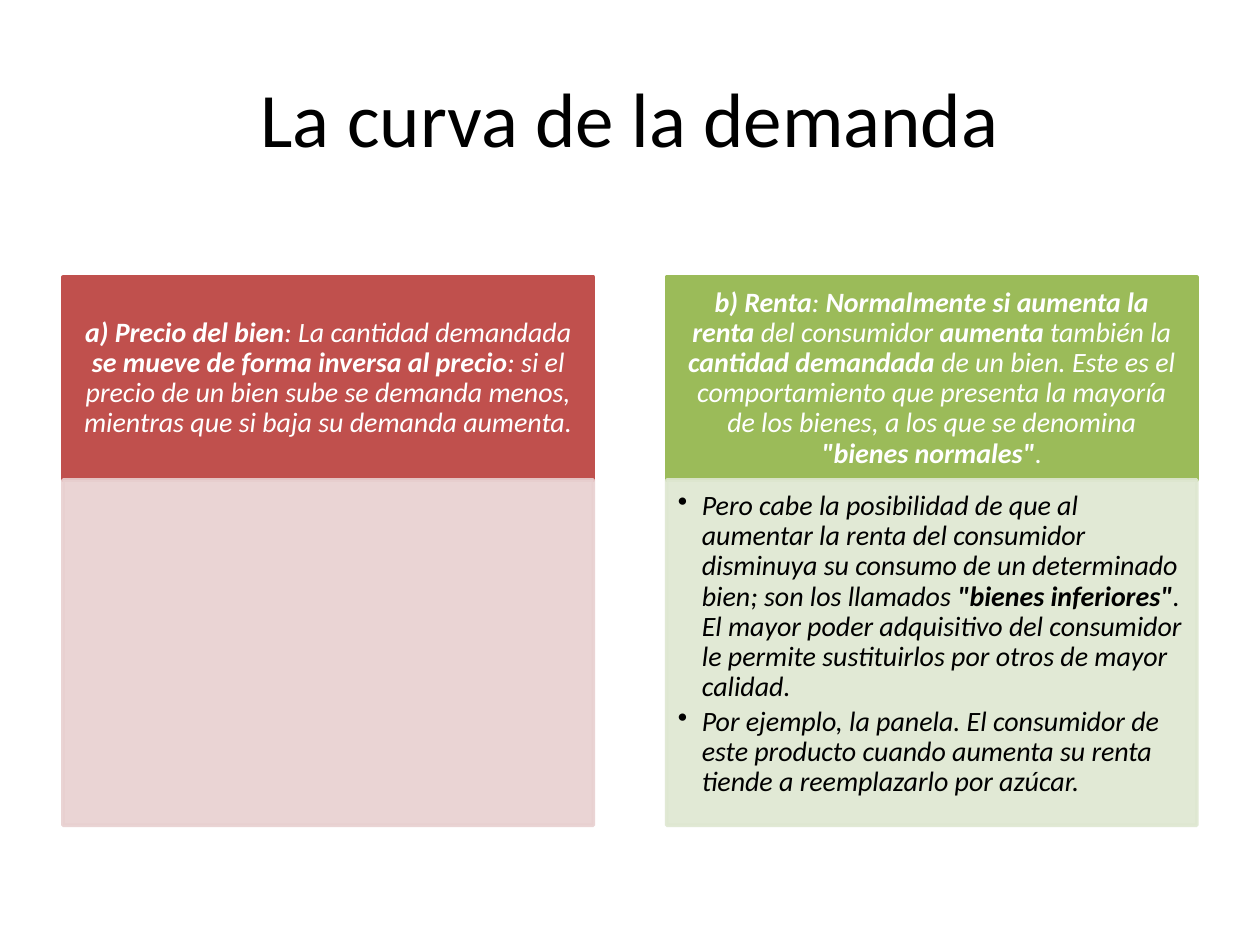
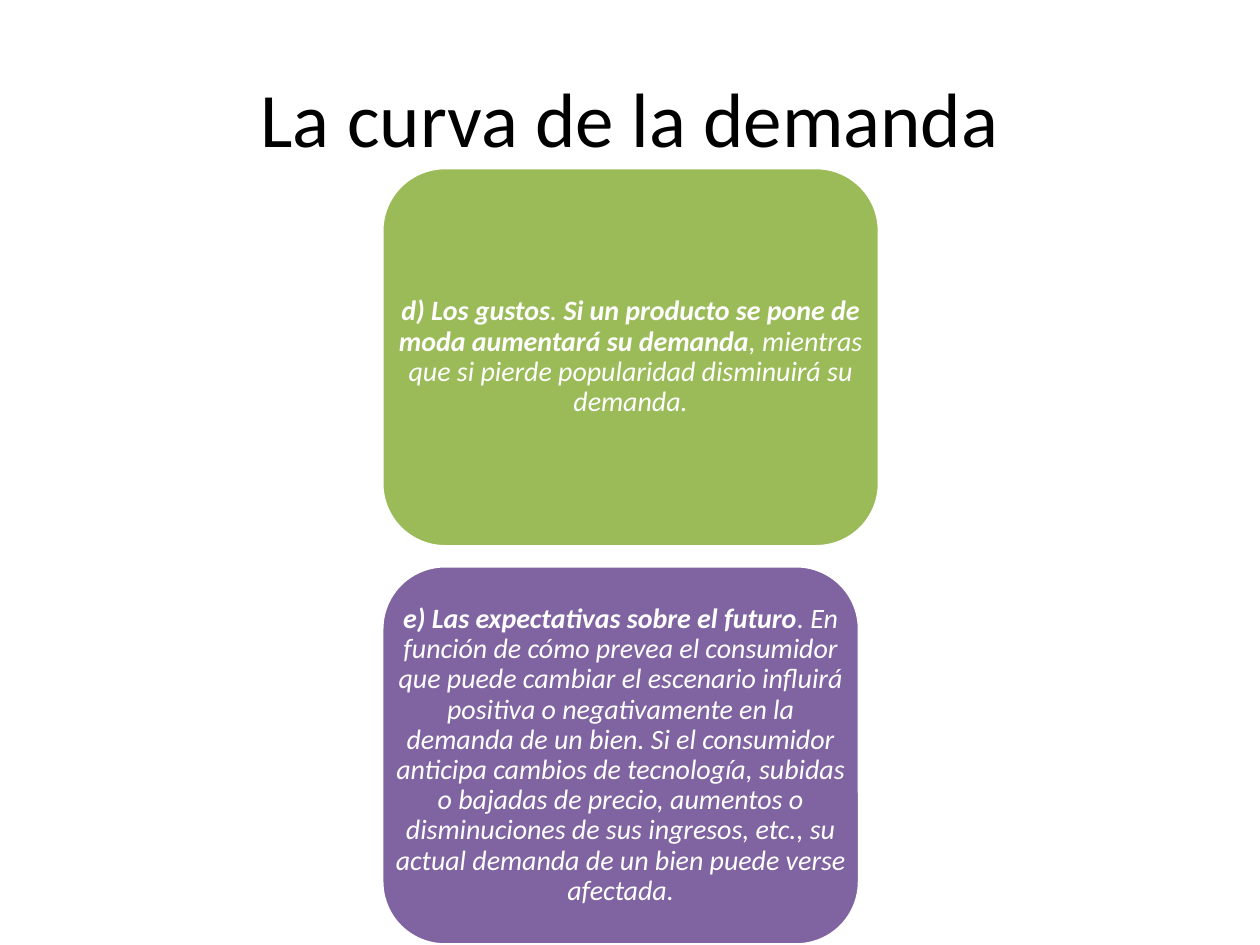
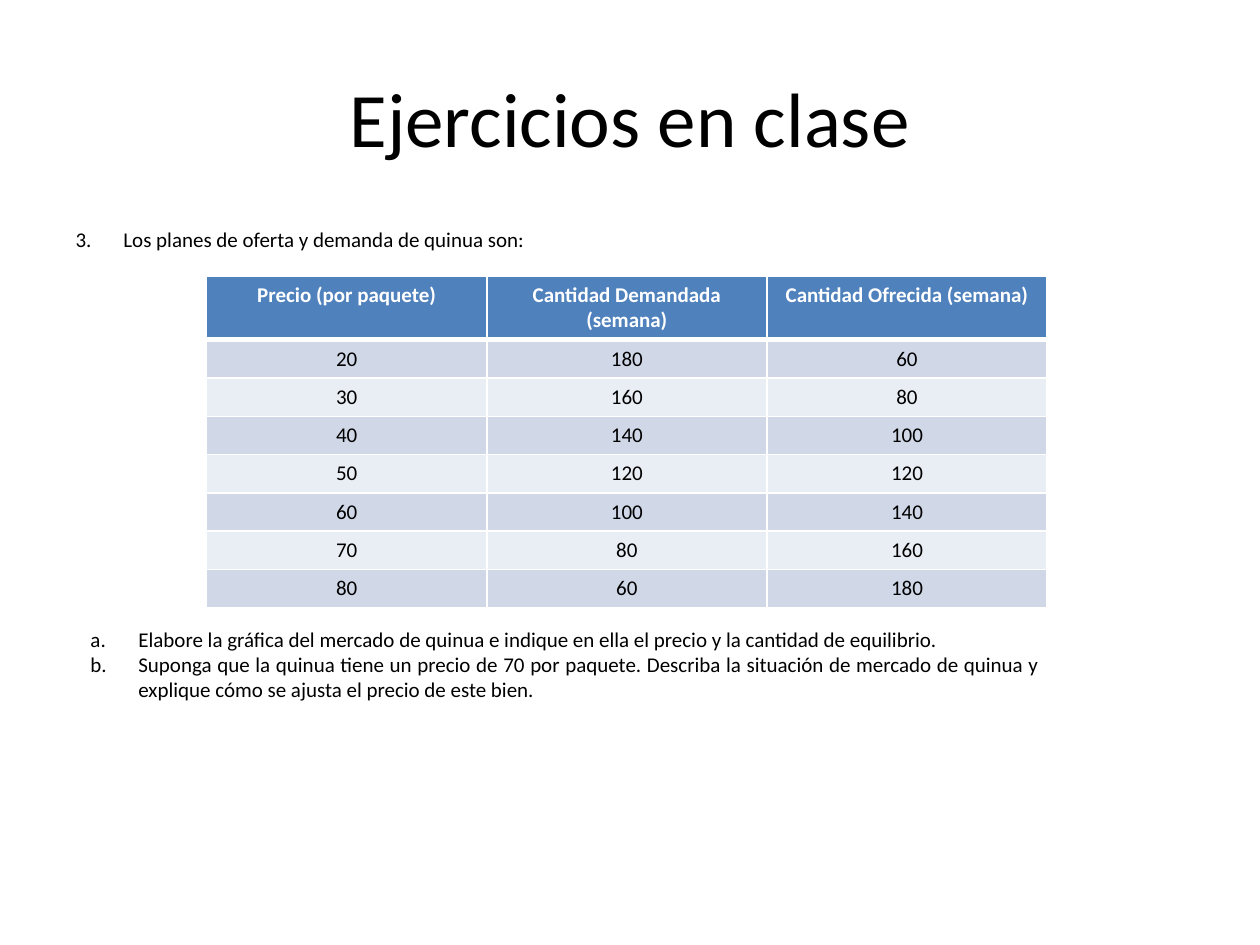
"""Builds three slides about the demand curve and a class exercise."""
from dataclasses import dataclass

from lxml import etree
from pptx import Presentation
from pptx import util as u
from pptx.dml.color import RGBColor
from pptx.enum import shapes, text
from pptx.oxml.ns import qn

GRID_COLS, GRID_ROWS = 100, 75
CENTER, LEFT, JUSTIFY = text.PP_ALIGN.CENTER, text.PP_ALIGN.LEFT, text.PP_ALIGN.JUSTIFY
TOP, MIDDLE = text.MSO_ANCHOR.TOP, text.MSO_ANCHOR.MIDDLE


@dataclass(frozen=True)
class Theme:
    """Colours, font and type sizes shared by the slides."""
    font: str = "Calibri"
    title: int = 44
    card: int = 16
    small: int = 12
    ink: str = "000000"
    paper: str = "FFFFFF"
    red: str = "C0504D"
    red_tint: str = "E8D0D0"
    green: str = "9BBB59"
    green_tint: str = "DEE7D1"
    purple: str = "8064A2"
    blue: str = "4F81BD"
    bands: tuple = ("D0D8E8", "E9EDF4")


@dataclass(frozen=True)
class Box:
    """A rectangle in columns and rows of the slide grid."""
    x: float
    y: float
    w: float
    h: float

    def emu(self, prs):
        """Return left, top, width and height as lengths."""
        col, row = prs.slide_width / GRID_COLS, prs.slide_height / GRID_ROWS
        return [u.Emu(round(v)) for v in (self.x * col, self.y * row, self.w * col, self.h * row)]

    def columns(self, count, gap):
        """Split the box into equal columns."""
        w = (self.w - gap * (count - 1)) / count
        return [Box(self.x + i * (w + gap), self.y, w, self.h) for i in range(count)]

    def split(self, share):
        """Cut the box into an upper and a lower part."""
        top = self.h * share
        return Box(self.x, self.y, self.w, top), Box(self.x, self.y + top, self.w, self.h - top)


THEME = Theme()
TITLE_BOX = Box(5, 3, 90, 12.5)
BODY_BOX = Box(5, 17.5, 90, 49.5)
CARDS_BOX = Box(5, 22, 90, 43.5)
PANELS_BOX = Box(30.3, 13.3, 39.5, 61.7)
TABLE_BOX = Box(16.4, 21.9, 66.7, 25.9)
TASKS_BOX = Box(6.2, 49.2, 77.3, 7.1)

CARDS = [
    (THEME.red, THEME.red_tint,
     "**a) Precio del bien**: La cantidad demandada **se mueve de forma inversa al precio**: "
     "si el precio de un bien sube se demanda menos, mientras que si baja su demanda aumenta.",
     []),
    (THEME.green, THEME.green_tint,
     "**b) Renta**: **Normalmente si aumenta la renta** del consumidor **aumenta** también la "
     "**cantidad demandada** de un bien. Este es el comportamiento que presenta la mayoría de "
     "los bienes, a los que se denomina **\"bienes normales\"**.",
     ["Pero cabe la posibilidad de que al aumentar la renta del consumidor disminuya su consumo "
      "de un determinado bien; son los llamados **\"bienes inferiores\"**. El mayor poder "
      "adquisitivo del consumidor le permite sustituirlos por otros de mayor calidad.",
      "Por ejemplo, la panela. El consumidor de este producto cuando aumenta su renta tiende a "
      "reemplazarlo por azúcar."]),
]
PANELS = [
    (THEME.green, 1,
     "**d) Los gustos**. **Si un producto se pone de moda aumentará su demanda**, mientras que "
     "si pierde popularidad disminuirá su demanda."),
    (THEME.purple, 0.96,
     "**e) Las expectativas sobre el futuro**. En función de cómo prevea el consumidor que puede "
     "cambiar el escenario influirá positiva o negativamente en la demanda de un bien. Si el "
     "consumidor anticipa cambios de tecnología, subidas o bajadas de precio, aumentos o "
     "disminuciones de sus ingresos, etc., su actual demanda de un bien puede verse afectada."),
]
MARKET = [
    ("Precio (por paquete)", "Cantidad Demandada (semana)", "Cantidad Ofrecida (semana)"),
    (20, 180, 60), (30, 160, 80), (40, 140, 100), (50, 120, 120),
    (60, 100, 140), (70, 80, 160), (80, 60, 180),
]
TASKS = [
    "Elabore la gráfica del mercado de quinua e indique en ella el precio y la cantidad de "
    "equilibrio.",
    "Suponga que la quinua tiene un precio de 70 por paquete. Describa la situación de mercado "
    "de quinua y explique cómo se ajusta el precio de este bien.",
]


def add_bullet(p, indent, tag, **attrs):
    """Give a paragraph a hanging bullet or number."""
    pPr = p._p.get_or_add_pPr()
    pPr.set("marL", str(u.Inches(indent)))
    pPr.set("indent", str(-u.Inches(indent)))
    etree.SubElement(pPr, qn(tag), attrs)


def write(tf, paragraphs, *, size, color=THEME.ink, bold=False, italic=False, align=LEFT,
          anchor=TOP, insets=None, spacing=1, after=0, bullet=None):
    """Fill a text frame; **marks** set bold and bullet is (indent, tag, attributes)."""
    tf.word_wrap = True
    tf.vertical_anchor = anchor
    if insets:
        tf.margin_left, tf.margin_top, tf.margin_right, tf.margin_bottom = map(u.Inches, insets)
    for i, line in enumerate(paragraphs):
        p = tf.add_paragraph() if i else tf.paragraphs[0]
        if bullet:
            indent, tag, attrs = bullet
            add_bullet(p, indent, tag, **attrs)
        p.alignment, p.line_spacing = align, spacing
        p.space_before, p.space_after = u.Pt(0), u.Pt(after)
        for j, part in enumerate(line.split("**")):
            if part:
                r = p.add_run()
                r.text = part
                f = r.font
                f.name, f.size, f.italic = THEME.font, u.Pt(size), italic
                f.bold = bold or j % 2 == 1
                f.color.rgb = RGBColor.from_string(color)


def add_block(prs, s, kind, box, fill, line, opacity=100):
    """Add a filled preset shape with a two-point outline."""
    sp = s.shapes.add_shape(kind, *box.emu(prs))
    sp.shadow.inherit = False
    sp.fill.solid()
    sp.fill.fore_color.rgb = RGBColor.from_string(fill)
    sp.line.color.rgb = RGBColor.from_string(line)
    sp.line.width = u.Pt(2)
    if opacity < 100:
        for clr in sp._element.spPr.iter(qn("a:srgbClr")):
            etree.SubElement(clr, qn("a:alpha"), val=str(opacity * 1000))
    return sp


def add_textbox(prs, s, box, paragraphs, **fmt):
    """Add a wrapping text box."""
    tf = s.shapes.add_textbox(*box.emu(prs)).text_frame
    write(tf, paragraphs, **fmt)


def fill_placeholder(prs, sp, box, paragraphs, **fmt):
    """Move a template placeholder and write its text."""
    sp.left, sp.top, sp.width, sp.height = box.emu(prs)
    write(sp.text_frame, paragraphs, **fmt)


def add_slide(prs, title, layout="Title Only"):
    """Add a slide with the shared title style."""
    s = prs.slides.add_slide(prs.slide_layouts.get_by_name(layout))
    fill_placeholder(prs, s.shapes.title, TITLE_BOX, [title], size=THEME.title,
                     align=CENTER, anchor=MIDDLE)
    return s


def add_card(prs, s, box, color, tint, heading, points):
    """Draw a coloured heading above a tinted box of bullet points."""
    head, body = box.split(0.37)
    rect = shapes.MSO_SHAPE.RECTANGLE
    sp = add_block(prs, s, rect, head, color, color)
    write(sp.text_frame, [heading], size=THEME.card, color=THEME.paper, italic=True,
          align=CENTER, anchor=MIDDLE, insets=(0.12, 0.07, 0.12, 0.07), spacing=0.9)
    sp = add_block(prs, s, rect, body, tint, tint, opacity=90)
    if points:
        write(sp.text_frame, points, size=THEME.card, italic=True, spacing=0.9, after=2.4,
              insets=(0.09, 0.09, 0.12, 0.14), bullet=(0.19, "a:buChar", {"char": "•"}))


def add_panels(prs, s, box, panels, gap=1.5):
    """Stack rounded panels of equal height, each with a centred text."""
    h = (box.h - gap * (len(panels) - 1)) / len(panels)
    for i, (color, share, line) in enumerate(panels):
        panel = Box(box.x, box.y + i * (h + gap), box.w * share, h)
        add_block(prs, s, shapes.MSO_SHAPE.ROUNDED_RECTANGLE, panel, color, THEME.paper)
        add_textbox(prs, s, panel, [line], size=THEME.card, color=THEME.paper, italic=True,
                    align=CENTER, anchor=MIDDLE, insets=(0.07, 0.03, 0.07, 0.03), spacing=0.9)


def set_borders(cell, **widths):
    """Draw white cell borders with the given widths in points."""
    tcPr = cell._tc.get_or_add_tcPr()
    for i, (side, width) in enumerate(widths.items()):
        ln = etree.Element(qn(f"a:ln{side}"), w=str(u.Pt(width)))
        fill = etree.SubElement(ln, qn("a:solidFill"))
        etree.SubElement(fill, qn("a:srgbClr"), val=THEME.paper)
        tcPr.insert(i, ln)


def add_market_table(prs, s, box, rows):
    """Add the banded table of prices and quantities."""
    table = s.shapes.add_table(len(rows), len(rows[0]), *box.emu(prs)).table
    head, body = box.split(0.19)
    row_h = body.emu(prs)[3] // (len(rows) - 1)
    for i, values in enumerate(rows):
        table.rows[i].height = row_h if i else head.emu(prs)[3]
        for j, value in enumerate(values):
            cell = table.cell(i, j)
            cell.fill.solid()
            cell.fill.fore_color.rgb = RGBColor.from_string(
                THEME.bands[(i - 1) % 2] if i else THEME.blue)
            set_borders(cell, L=1, R=1, T=3 if i == 1 else 1, B=1 if i else 3)
            write(cell.text_frame, [str(value)], size=THEME.small, bold=i == 0,
                  color=THEME.ink if i else THEME.paper, align=CENTER)


def cards_slide(prs):
    """Build the slide on price and income."""
    s = add_slide(prs, "La curva de la demanda")
    for box, card in zip(CARDS_BOX.columns(len(CARDS), 5.8), CARDS):
        add_card(prs, s, box, *card)


def panels_slide(prs):
    """Build the slide on tastes and expectations."""
    s = add_slide(prs, "La curva de la demanda")
    add_panels(prs, s, PANELS_BOX, PANELS)


def exercise_slide(prs):
    """Build the exercise with its table and tasks."""
    s = add_slide(prs, "Ejercicios en clase", "Title and Content")
    fill_placeholder(prs, s.placeholders[1], BODY_BOX,
                     ["Los planes de oferta y demanda de quinua son:"], size=THEME.small,
                     bullet=(0.38, "a:buAutoNum", {"type": "arabicPeriod", "startAt": "3"}))
    add_market_table(prs, s, TABLE_BOX, MARKET)
    add_textbox(prs, s, TASKS_BOX, TASKS, size=THEME.small, align=JUSTIFY,
                bullet=(0.38, "a:buAutoNum", {"type": "alphaLcPeriod"}))


def main():
    """Build and save the presentation."""
    prs = Presentation()
    prs.slide_width, prs.slide_height = u.Inches(10), u.Inches(7.5)
    cards_slide(prs)
    panels_slide(prs)
    exercise_slide(prs)
    prs.save("out.pptx")


if __name__ == "__main__":
    main()
